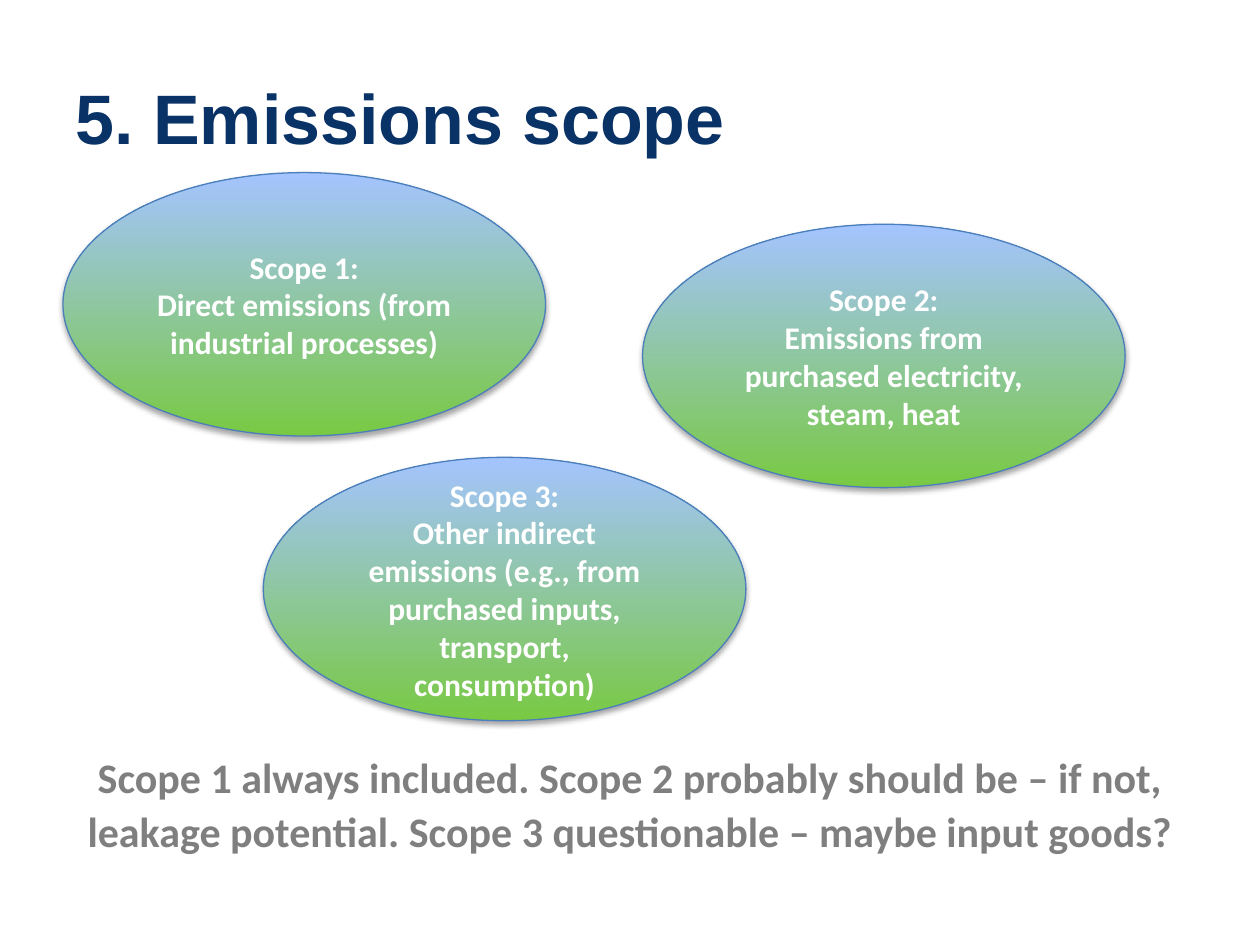
from dataclasses import dataclass

from lxml import etree
from pptx import Presentation
from pptx.dml.color import RGBColor as Rgb
from pptx.enum.shapes import MSO_SHAPE as Shape
from pptx.enum.text import MSO_ANCHOR as Anchor, PP_ALIGN as Align
from pptx.oxml.ns import qn
from pptx.util import Inches, Pt

COLORS = {
    "navy": "093266",
    "gray": "7F7F7F",
    "white": "FFFFFF",
    "green": "79C943",
    "sky": "A4C4FF",
    "edge": "4B7EBC",
    "shade": "000000",
}
OVAL_W, OVAL_H = 3.83, 2.09


@dataclass
class Scope:
    left: float
    top: float
    name: str
    detail: str


SCOPES = [
    Scope(0.5, 1.37, "Scope 1:", "Direct emissions (from industrial processes)"),
    Scope(5.1, 1.78, "Scope 2:",
          "Emissions from purchased electricity, steam, heat"),
    Scope(2.09, 3.63, "Scope 3:",
          "Other indirect emissions (e.g., from purchased inputs, "
          "transport, consumption)"),
]


def color(key: str) -> Rgb:
    return Rgb.from_string(COLORS[key])


def write(frame, lines: list[str], size: float, tint: str,
          face: str = "Calibri", align=Align.CENTER) -> None:
    """Fill a text frame with one bold paragraph per line."""
    frame.word_wrap = True
    frame.text = "\n".join(lines)
    style = {"name": face, "size": Pt(size), "bold": True}
    for para in frame.paragraphs:
        para.alignment = align
        for key, value in style.items():
            setattr(para.font, key, value)
        para.font.color.rgb = color(tint)


def add_shadow(shape) -> None:
    """Give a shape a soft shadow straight below it."""
    shape.shadow.inherit = False
    effects = shape._element.spPr.find(qn("a:effectLst"))
    outer = etree.SubElement(effects, qn("a:outerShdw"), blurRad=str(Pt(3.1)),
                             dist=str(Pt(1.8)), dir="5400000", rotWithShape="0")
    shade = etree.SubElement(outer, qn("a:srgbClr"), val=COLORS["shade"])
    etree.SubElement(shade, qn("a:alpha"), val="35000")


def draw_scope(slide, scope: Scope) -> None:
    oval = slide.shapes.add_shape(Shape.OVAL, Inches(scope.left), Inches(scope.top),
                                  Inches(OVAL_W), Inches(OVAL_H))
    # Green at the bottom, blue at the top
    oval.fill.gradient()
    oval.fill.gradient_angle = 90
    for stop, key, place in zip(oval.fill.gradient_stops, ("green", "sky"), (0, 1)):
        stop.color.rgb = color(key)
        stop.position = place
    oval.line.color.rgb = color("edge")
    oval.line.width = Pt(0.75)
    add_shadow(oval)
    oval.text_frame.vertical_anchor = Anchor.MIDDLE
    write(oval.text_frame, [scope.name, scope.detail], 18, "white")


def main() -> None:
    deck = Presentation()
    deck.slide_width, deck.slide_height = Inches(10), Inches(7.5)
    slide = deck.slides.add_slide(deck.slide_layouts[5])

    # Title
    title = slide.shapes.title
    title.left, title.top = Inches(0.5), Inches(0.3)
    title.width, title.height = Inches(8.03), Inches(1.25)
    title.text_frame.vertical_anchor = Anchor.MIDDLE
    write(title.text_frame, ["5. Emissions scope"], 40, "navy", "Arial", Align.LEFT)

    # Closing remark
    note = slide.shapes.add_textbox(Inches(0.43), Inches(5.89),
                                    Inches(9.14), Inches(1.06))
    write(note.text_frame,
          ["Scope 1 always included. Scope 2 probably should be – if not, "
           "leakage potential. Scope 3 questionable – maybe input goods?"],
          24, "gray")
    para = note.text_frame.paragraphs[0]
    para.line_spacing, para.space_after = 1.07, Pt(12)

    # Scope ovals
    for scope in SCOPES:
        draw_scope(slide, scope)

    deck.save("out.pptx")


if __name__ == "__main__":
    main()
